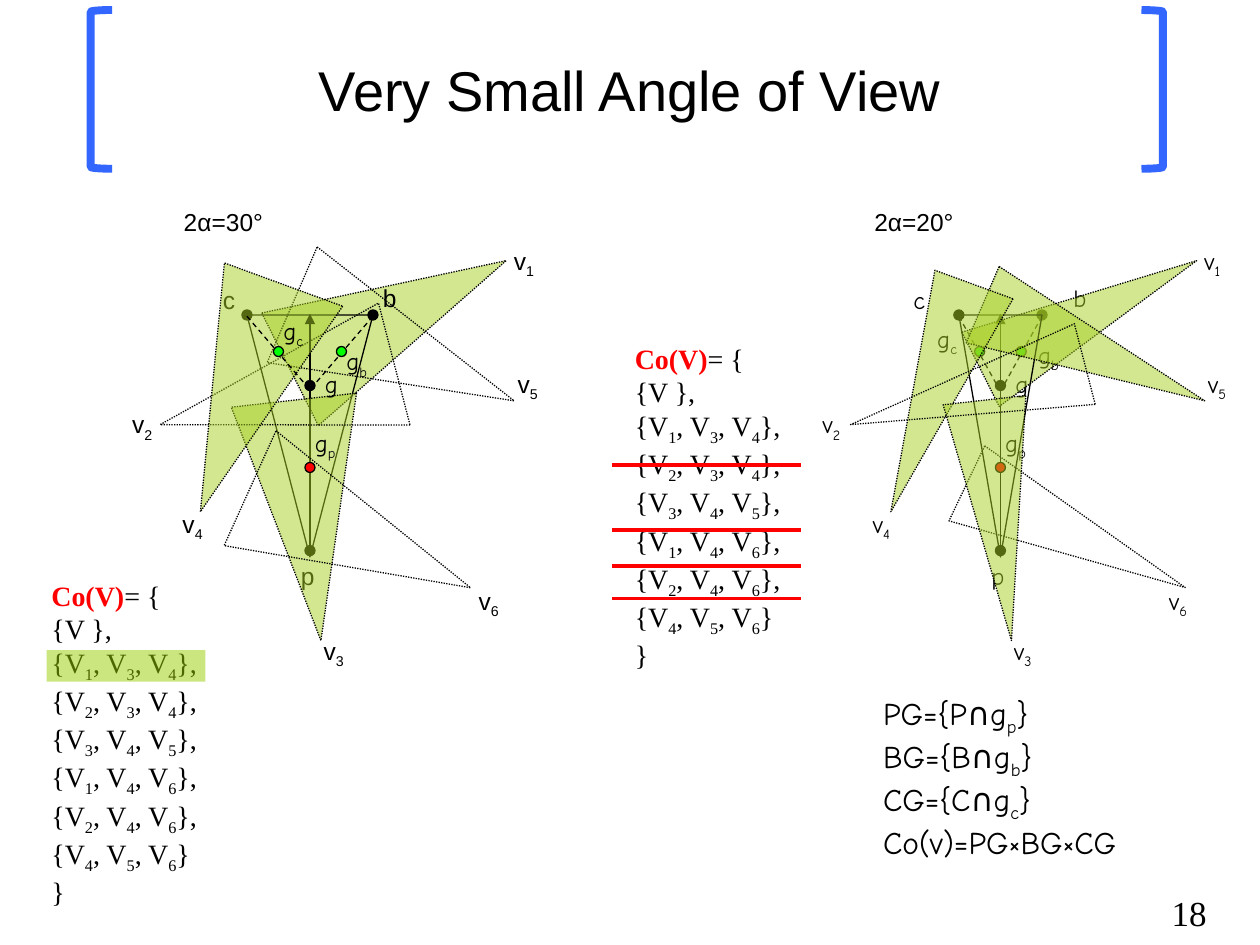
from dataclasses import dataclass

from lxml import etree
from pptx import Presentation
from pptx.dml.color import RGBColor
from pptx.enum.dml import MSO_LINE
from pptx.enum.shapes import MSO_CONNECTOR, MSO_SHAPE
from pptx.enum.text import MSO_ANCHOR, MSO_AUTO_SIZE, PP_ALIGN
from pptx.oxml.ns import qn
from pptx.util import Inches, Pt

STRAIGHT = MSO_CONNECTOR.STRAIGHT
TRIANGLE, OVAL, RECTANGLE = MSO_SHAPE.ISOSCELES_TRIANGLE, MSO_SHAPE.OVAL, MSO_SHAPE.RECTANGLE
LEFT_BRACKET, RIGHT_BRACKET = MSO_SHAPE.LEFT_BRACKET, MSO_SHAPE.RIGHT_BRACKET
DASH, DOTTED = MSO_LINE.DASH, MSO_LINE.ROUND_DOT
MIDDLE, CENTER = MSO_ANCHOR.MIDDLE, PP_ALIGN.CENTER
FIT, FIXED = MSO_AUTO_SIZE.SHAPE_TO_FIT_TEXT, MSO_AUTO_SIZE.NONE


@dataclass(frozen=True)
class Theme:
    black: str = "000000"
    white: str = "FFFFFF"
    red: str = "FF0000"
    green: str = "00FF00"
    bracket: str = "3366FF"
    cone: str = "A8D025"
    highlight: str = "99CC00"
    sans: str = "Arial"
    hand: str = "Comic Neue"
    serif: str = "Times New Roman"
    title: int = 32
    number: int = 20
    formula: int = 18
    listing: int = 16
    label: int = 14


THEME = Theme()

CONES = {
    "v1": (3.16, 1.54, 63.3),
    "v2": (2.2, 2.17, 255.5),
    "v3": (2.44, 3.17, 173.6),
    "v4": (1.92, 2.2, 200.1),
    "v5": (3.2, 1.84, 113.4),
    "base": (2.46, 2.5, 180),
}
CORNER_LABELS = {"p": (2.29, 4.4), "b": (2.94, 2.2), "c": (1.67, 2.21)}
VIEW_LABELS = {"v_1": (3.98, 1.9), "v_2": (0.95, 3.2), "v_3": (2.47, 5),
               "v_4": (1.35, 3.99), "v_5": (4.01, 2.88), "v_6": (3.7, 4.6)}
CENTER_LABELS = {"g": (2.48, 2.88), "g_p": (2.4, 3.35)}
COVERS = ["{V },", "{V_1, V_3, V_4},", "{V_2, V_3, V_4},", "{V_3, V_4, V_5},",
          "{V_1, V_4, V_6},", "{V_2, V_4, V_6},", "{V_4, V_5, V_6}", "}"]
FORMULAS = ["PG={P∩g_p}", "BG={B∩g_b}", "CG={C∩g_c}", "Co(v)=PG×BG×CG"]


class SlideBuilder:
    def __init__(self, slide, theme):
        self.slide = slide
        self.theme = theme

    def apply(self, target, values):
        for name, value in values.items():
            setattr(target, name, value)

    def format_run(self, run, font, size, color, bold=False):
        self.apply(run.font, {"name": font, "size": Pt(size), "bold": bold})
        run.font.color.rgb = RGBColor.from_string(color)

    def add_runs(self, paragraph, text, font, size, color, bold=False):
        first, *others = text.split("_")
        pieces = [(first, False)]
        for other in others:
            pieces += [(other[:1], True), (other[1:], False)]
        for piece, lowered in pieces:
            if piece:
                run = paragraph.add_run()
                run.text = piece
                self.format_run(run, font, size, color, bold)
                if lowered:
                    run.font._element.set("baseline", "-25000")

    def title(self, text, left, top, width, height):
        shape = self.slide.shapes.title
        self.apply(shape, {"left": Inches(left), "top": Inches(top),
                           "width": Inches(width), "height": Inches(height)})
        self.apply(shape.text_frame, {"vertical_anchor": MIDDLE, "auto_size": FIXED})
        paragraph = shape.text_frame.paragraphs[0]
        paragraph.alignment = CENTER
        self.add_runs(paragraph, text, self.theme.sans, self.theme.title, self.theme.black)

    def text(self, lines, left, top, width, height, font, size, wrap=False, lead=""):
        shape = self.slide.shapes.add_textbox(*map(Inches, (left, top, width, height)))
        frame = shape.text_frame
        self.apply(frame, {"word_wrap": wrap, "auto_size": FIT})
        for index, line in enumerate(lines):
            paragraph = frame.add_paragraph() if index else frame.paragraphs[0]
            if lead and not index:
                self.add_runs(paragraph, lead, font, size, self.theme.red, True)
            self.add_runs(paragraph, line, font, size, self.theme.black)

    def label(self, text, left, top, font):
        width = 0.37 if "_" in text else 0.31
        self.text([text], left, top, width, 0.33, font, self.theme.label)

    def shape(self, kind, left, top, width, height, fill=None, opacity=100,
              line=None, weight=0.75, dash=None, rotation=0):
        shape = self.slide.shapes.add_shape(kind, *map(Inches, (left, top, width, height)))
        shape.shadow.inherit = False
        shape.rotation = rotation
        if fill:
            shape.fill.solid()
            shape.fill.fore_color.rgb = RGBColor.from_string(fill)
            if opacity < 100:
                color = shape._element.spPr.find(qn("a:solidFill"))[0]
                etree.SubElement(color, qn("a:alpha")).set("val", str(opacity * 1000))
        else:
            shape.fill.background()
        if line:
            self.format_line(shape.line, line, weight, dash)
        else:
            shape.line.fill.background()

    def format_line(self, line, color, weight, dash):
        line.color.rgb = RGBColor.from_string(color)
        self.apply(line, {"width": Pt(weight), "dash_style": dash})

    def line(self, start, end, color, weight=0.75, dash=None, arrow=False):
        connector = self.slide.shapes.add_connector(STRAIGHT, *map(Inches, (*start, *end)))
        self.format_line(connector.line, color, weight, dash)
        properties = connector._element.spPr
        if arrow:
            outline = properties.find(qn("a:ln"))
            etree.SubElement(outline, qn("a:headEnd")).set("type", "triangle")
        etree.SubElement(properties, qn("a:effectLst"))

    def dot(self, x, y, color):
        self.shape(OVAL, x - 0.04, y - 0.04, 0.08, 0.08, color, line=self.theme.black)

    def diagram(self, angle, shift, width, font, cone_six, filled, behind, front, side_labels):
        theme = self.theme
        axis = 2.46 + shift
        cones = {**CONES, "v6": cone_six}

        def draw_cones(names):
            for name in names:
                x, top, rotation = cones[name]
                self.shape(TRIANGLE, x + shift - width / 2, top, width, 1.92,
                           theme.cone if name in filled else None, 50, theme.black,
                           dash=None if name == "base" else DOTTED, rotation=rotation)

        def draw_labels(labels, label_font):
            for text, (left, top) in labels.items():
                self.label(text, left + shift, top, label_font)

        def draw_center():
            self.dot(axis, 3.06, theme.black)
            for side in (-1, 1):
                self.line((axis + side * width / 2, 2.51), (axis + side * 0.02, 3.07),
                          theme.black, dash=DASH)
                self.dot(axis + side * width / 4, 2.79, theme.green)
            self.dot(axis, 3.71, theme.red)
            draw_labels({**CENTER_LABELS, **side_labels}, theme.hand)

        draw_cones(behind)
        for x, y in ((axis, 4.37), (axis + width / 2, 2.5), (axis - width / 2, 2.5)):
            self.dot(x, y, theme.black)
        draw_labels({**CORNER_LABELS, **VIEW_LABELS}, font)
        self.line((axis, 2.49), (axis, 4.38), theme.black, arrow=True)
        if behind:
            draw_cones(front)
            draw_center()
        else:
            draw_center()
            draw_cones(front)
        self.text([f"2α={angle}°"], 1.36 + shift, 1.59, 0.85, 0.33, theme.sans, theme.label)

    def covers(self, left, top):
        self.text(["= {", *COVERS], left, top, 1.56, 2.51, self.theme.serif,
                  self.theme.listing, True, "Co(V)")


def main():
    presentation = Presentation()
    presentation.slide_width, presentation.slide_height = Inches(10), Inches(7.5)
    slide = presentation.slides.add_slide(presentation.slide_layouts[5])
    builder = SlideBuilder(slide, THEME)

    for kind, left in ((LEFT_BRACKET, 0.72), (RIGHT_BRACKET, 9.06)):
        builder.shape(kind, left, 0.08, 0.17, 1.26, THEME.white, line=THEME.bracket, weight=4.5)
    builder.text(["18"], 9.2, 7.03, 0.53, 0.43, THEME.serif, THEME.number)
    builder.title("Very Small Angle of View", 0.75, 0.08, 8.5, 1.25)
    builder.text(FORMULAS, 6.91, 5.46, 2.38, 1.3, THEME.hand, THEME.formula, True)

    builder.diagram(20, 5.48, 0.66, THEME.hand, (3.06, 3.29, 115.5), ("v1", "v3", "v4", "v5"),
                    (), ("v1", "base", "v5", "v4", "v6", "v3", "v2"),
                    {"g_c": (1.86, 2.52), "g_b": (2.66, 2.65)})
    builder.diagram(30, 0, 1, THEME.sans, (2.86, 3.31, 114.3), ("v1", "v3", "v4"),
                    ("v1", "base"), ("v3", "v2", "v6", "v5", "v4"),
                    {"g_c": (2.15, 2.46), "g_b": (2.65, 2.7)})

    builder.covers(0.31, 4.54)
    builder.shape(RECTANGLE, 0.37, 5.16, 1.26, 0.25, THEME.highlight, 50)
    builder.covers(4.94, 2.66)
    for y in (3.69, 4.21, 4.49, 4.75):
        builder.line((4.86, y), (6.36, y), THEME.red, 2.25)

    presentation.save("out.pptx")


if __name__ == "__main__":
    main()
